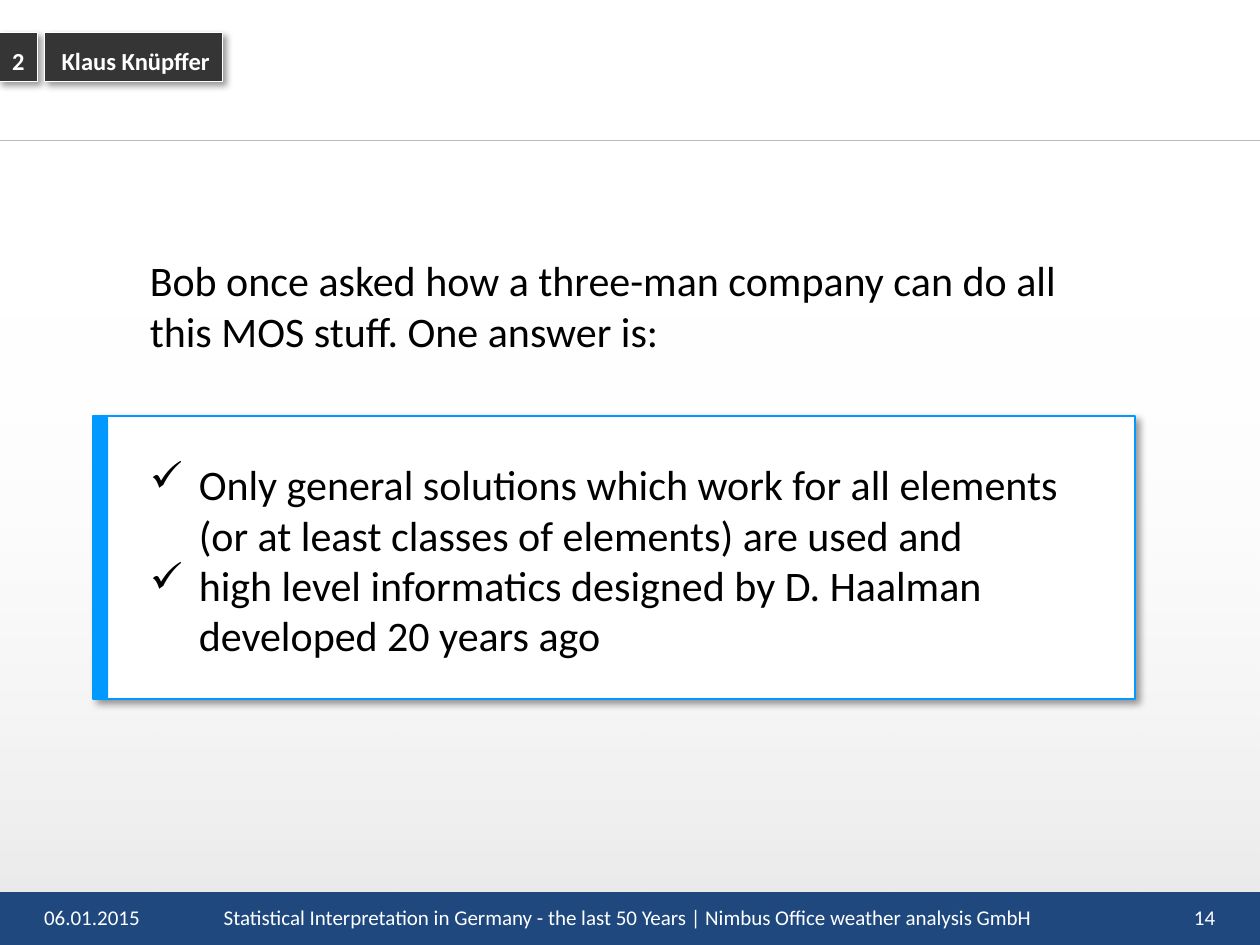
import pptx
import pptx.dml.color
import pptx.enum.shapes
import pptx.enum.text
import pptx.oxml
import pptx.oxml.ns
import pptx.util
from dataclasses import dataclass

Pt = pptx.util.Pt
Align = pptx.enum.text.PP_ALIGN
Anchor = pptx.enum.text.MSO_ANCHOR
qn = pptx.oxml.ns.qn
NAMESPACE = pptx.oxml.ns.nsdecls("a")


@dataclass(frozen=True)
class Theme:
    font: str = "Calibri"
    body_size: float = 24
    tag_size: float = 14
    footer_size: float = 12
    white: str = "FFFFFF"
    black: str = "000000"
    navy: str = "1F487E"
    blue: str = "0198FF"
    dark: str = "353535"
    rule: str = "BABABA"


THEME = Theme()
WIDTH, HEIGHT = 720, 540


def rgb(value):
    return pptx.dml.color.RGBColor.from_string(value)


def add_rect(page, box, fill=None, line=None, line_width=1, shadow=False):
    """Add a rectangle; box is (left, top, width, height) in points."""
    rect = page.shapes.add_shape(
        pptx.enum.shapes.MSO_SHAPE.RECTANGLE, *map(Pt, box))
    rect.shadow.inherit = False
    if fill:
        rect.fill.solid()
        rect.fill.fore_color.rgb = rgb(fill)
    if line:
        rect.line.color.rgb = rgb(line)
        rect.line.width = Pt(line_width)
    else:
        rect.line.fill.background()
    if shadow:
        effects = rect._element.spPr.find(qn("a:effectLst"))
        effects.append(pptx.oxml.parse_xml(
            f'<a:outerShdw {NAMESPACE} blurRad="{Pt(4)}" dist="{Pt(3)}" '
            f'dir="2700000" algn="tl" rotWithShape="0">'
            f'<a:srgbClr val="{THEME.black}"><a:alpha val="40000"/>'
            f'</a:srgbClr></a:outerShdw>'))
    return rect


def add_text(page, box, lines, size, color, bold=False, align=Align.LEFT,
             anchor=Anchor.TOP, inset=None, bullet=None, indent=28):
    text_box = page.shapes.add_textbox(*map(Pt, box))
    frame = text_box.text_frame
    frame.word_wrap = True
    frame.vertical_anchor = anchor
    if inset is not None:
        frame.margin_left = frame.margin_right = Pt(inset)
        frame.margin_top = frame.margin_bottom = Pt(inset)
    frame.text = "\n".join(lines)
    for para in frame.paragraphs:
        para.alignment = align
        if bullet:
            properties = para._p.get_or_add_pPr()
            properties.set("marL", str(Pt(indent)))
            properties.set("indent", str(-Pt(indent)))
            properties.append(pptx.oxml.parse_xml(
                f'<a:buChar {NAMESPACE} char="{bullet}"/>'))
        for span in para.runs:
            span.font.name = THEME.font
            span.font.size = Pt(size)
            span.font.bold = bold
            span.font.color.rgb = rgb(color)


def add_backdrop(page, box):
    # Black haze that fades out towards the top
    haze = add_rect(page, box)
    haze.fill.gradient()
    haze.fill.gradient_angle = 90
    for stop, color in zip(haze.fill.gradient_stops, (THEME.black, THEME.white)):
        stop.color.rgb = rgb(color)
    for color, alpha in zip(haze._element.spPr.iter(qn("a:srgbClr")), (10000, 0)):
        color.append(pptx.oxml.parse_xml(
            f'<a:alpha {NAMESPACE} val="{alpha}"/>'))


def add_header(page, box):
    left, top, width, height = box
    # Chapter number and speaker tags
    tag_top, tag_height = top + 18.7, 28.1
    tags = (("2", -0.7, 22.3, THEME.white, Align.CENTER, 0),
            ("Klaus Knüpffer", 25.2, 102.2, THEME.white, Align.LEFT, 10))
    for label, offset, tag_width, line, align, pad in tags:
        tag = (left + offset, tag_top, tag_width, tag_height)
        add_rect(page, tag, THEME.dark, line, 0.5, shadow=True)
        add_text(page, (left + offset + pad, tag_top + 2, tag_width - pad, tag_height),
                 [label], THEME.tag_size, THEME.white, bold=True,
                 align=align, anchor=Anchor.MIDDLE, inset=0)
    # Rule under the header
    bottom = Pt(top + height)
    rule = page.shapes.add_connector(
        pptx.enum.shapes.MSO_CONNECTOR.STRAIGHT,
        Pt(left), bottom, Pt(left + width), bottom)
    rule.line.color.rgb = rgb(THEME.rule)
    rule.line.width = Pt(0.75)
    rule._element.spPr.append(pptx.oxml.parse_xml(f"<a:effectLst {NAMESPACE}/>"))


def add_answer(page, box):
    left, top, width, height = box
    add_rect(page, box, THEME.white, THEME.blue, 1, shadow=True)
    add_rect(page, (left, top, 8.6, height), THEME.blue)
    add_text(page, (left + 25.2, top + 21, 540.7, height - 42),
             ["Only general solutions which work for all elements "
              "(or at least classes of elements) are used and",
              "high level informatics designed by D. Haalman "
              "developed 20 years ago"],
             THEME.body_size, THEME.black, bullet="✓")


def add_footer(page, box):
    left, top, width, height = box
    add_rect(page, box, THEME.navy)
    fields = (
        ("06.01.2015", 25.2, 84, Align.LEFT),
        ("Statistical Interpretation in Germany - the last 50 Years | "
         "Nimbus Office weather analysis GmbH", 109.4, 499, Align.CENTER),
        ("14", 610, 84.4, Align.RIGHT))
    for label, offset, field_width, align in fields:
        add_text(page, (left + offset, top, field_width, height - 1.4), [label],
                 THEME.footer_size, THEME.white, align=align,
                 anchor=Anchor.MIDDLE, inset=0)


def main():
    deck = pptx.Presentation()
    deck.slide_width, deck.slide_height = Pt(WIDTH), Pt(HEIGHT)
    page = deck.slides.add_slide(deck.slide_layouts[6])
    add_backdrop(page, (0, 159, WIDTH, HEIGHT - 159))
    add_header(page, (0, 0, WIDTH, 80.4))
    add_text(page, (78.5, 142, 540.7, 66),
             ["Bob once asked how a three-man company can do all "
              "this MOS stuff. One answer is:"],
             THEME.body_size, THEME.black)
    add_answer(page, (53.3, 237.6, 595.4, 162))
    add_footer(page, (0, 509.8, WIDTH, HEIGHT - 509.8))
    deck.save("out.pptx")


if __name__ == "__main__":
    main()
